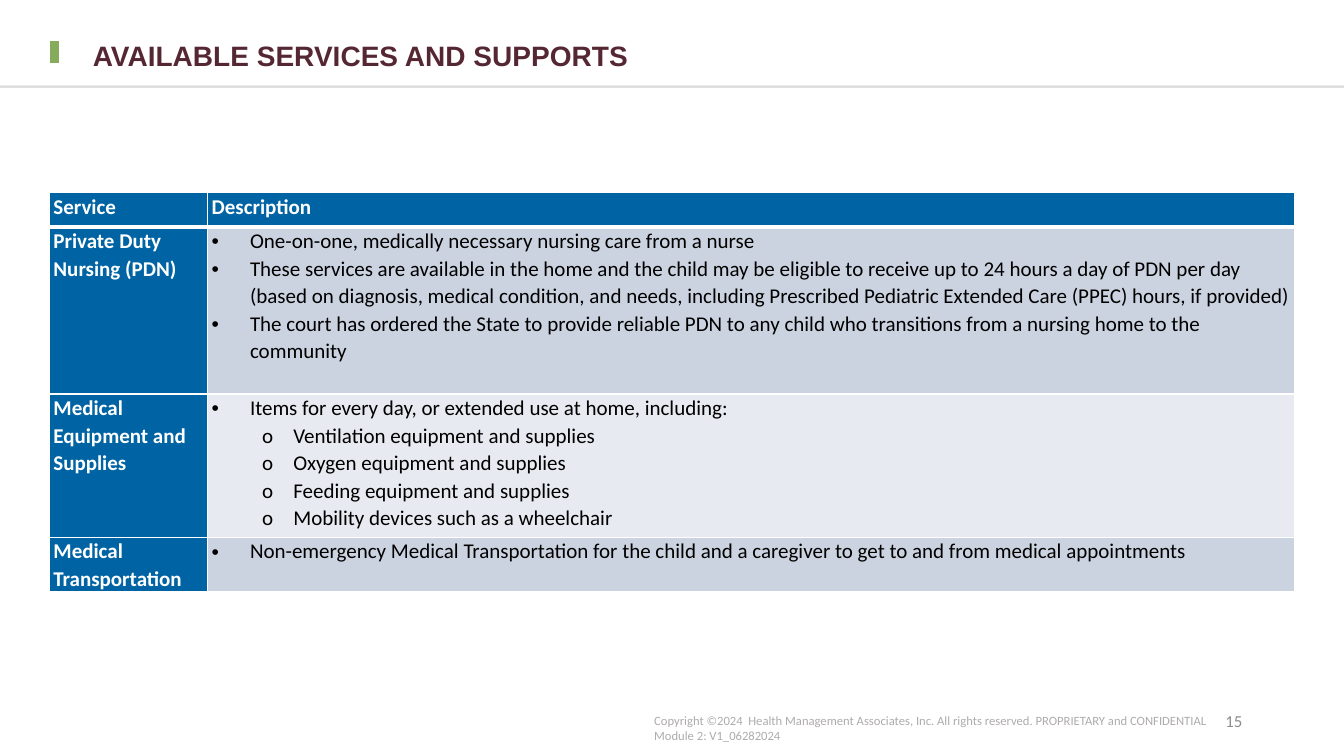
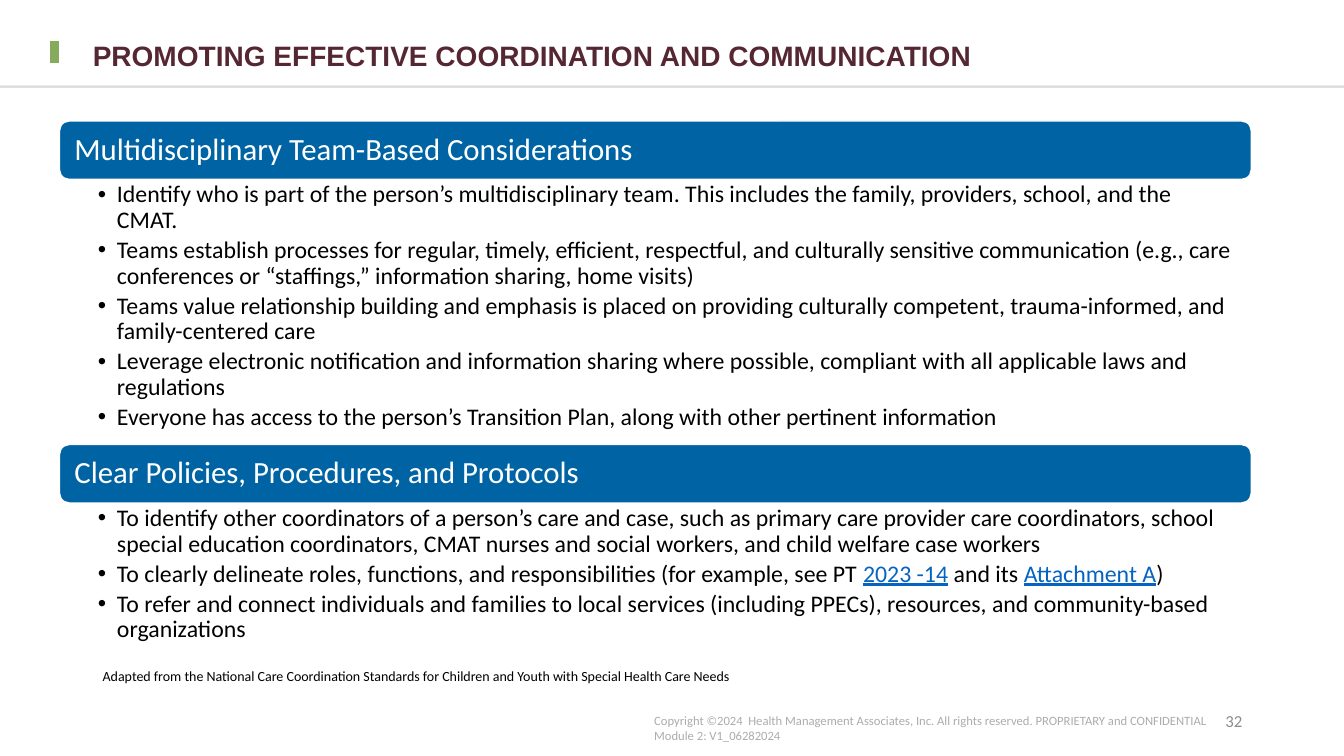
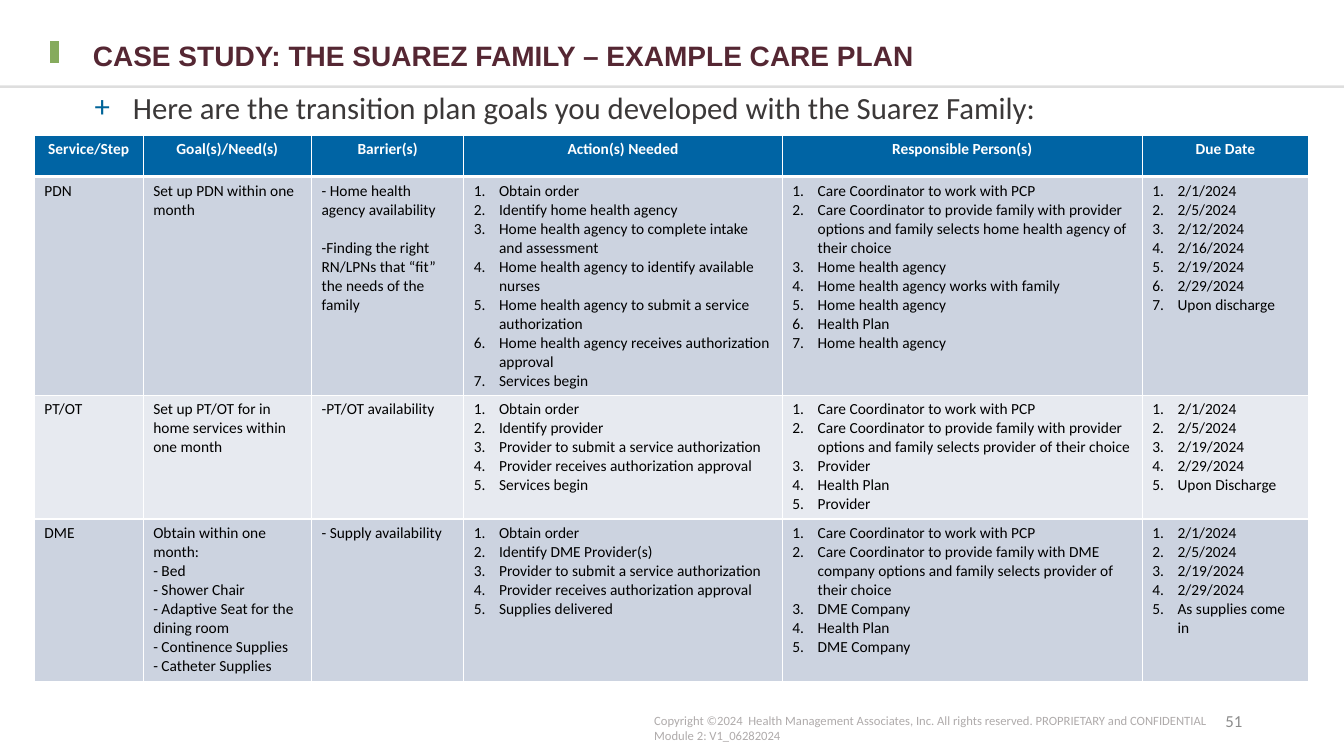
from lxml.etree import SubElement
from pptx import Presentation
from pptx.dml.color import RGBColor
from pptx.enum.shapes import MSO_CONNECTOR, MSO_SHAPE
from pptx.enum.text import MSO_ANCHOR, MSO_AUTO_SIZE, PP_ALIGN
from pptx.oxml.ns import qn
from pptx.util import Inches, Pt

COLORS = {
    "title": "552733",
    "green": "86AB5D",
    "blue": "0064A4",
    "plus": "006498",
    "band_dark": "CCD3E0",
    "band_light": "E7EAF0",
    "link": "0563C1",
    "intro": "3B3838",
    "footer": "AFABAB",
    "number": "8C8C8C",
    "black": "000000",
    "white": "FFFFFF",
}
MARKERS = {
    "bullet": {"left": 0.38, "hanging": 0.38, "char": "•", "font": "Arial"},
    "circle": {"left": 0.81, "hanging": 0.31, "char": "o", "font": "Calibri"},
    "point": {"left": 0.19, "hanging": 0.19, "char": "•", "font": "Arial"},
    "plus": {"left": 0.88, "hanging": 0.38, "char": "+", "font": "Calibri"},
    "number": {"left": 0.25, "hanging": 0.25},
}


def write(text_frame, lines, size, color, bold=False, marker=None, spacing=1.0, after=0, align=PP_ALIGN.LEFT):
    text_frame.word_wrap = True
    for index, line in enumerate(lines):
        line_marker, text = line if isinstance(line, tuple) else (marker, line)
        paragraph = text_frame.paragraphs[0] if index == 0 else text_frame.add_paragraph()
        paragraph.alignment = align
        paragraph.line_spacing = spacing
        paragraph.space_after = Pt(after)
        if line_marker:
            look = MARKERS[line_marker]
            properties = paragraph._p.get_or_add_pPr()
            properties.set("marL", str(Inches(look["left"])))
            properties.set("indent", str(-Inches(look["hanging"])))
            if line_marker == "plus":
                bullet_color = SubElement(properties, qn("a:buClr"))
                SubElement(bullet_color, qn("a:srgbClr"), val=COLORS["plus"])
            if "char" in look:
                SubElement(properties, qn("a:buFont"), typeface=look["font"])
                SubElement(properties, qn("a:buChar"), char=look["char"])
            else:
                SubElement(properties, qn("a:buAutoNum"), type="arabicPeriod")
            if line_marker in ("circle", "point", "plus"):
                paragraph.level = 1
        for part, piece in enumerate(text.split("|")):
            is_link = part % 2 == 1
            run = paragraph.add_run()
            run.text = piece
            run.font.name = "Calibri"
            run.font.size = Pt(size)
            run.font.bold = bold
            run.font.color.rgb = RGBColor.from_string(COLORS["link" if is_link else color])
            if is_link:
                run.font.underline = True


def add_text_box(slide, box, lines, size, color, anchor=MSO_ANCHOR.TOP, margins=(0.1, 0.05, 0.1, 0.05), **options):
    text_frame = slide.shapes.add_textbox(*map(Inches, box)).text_frame
    text_frame.vertical_anchor = anchor
    (text_frame.margin_left, text_frame.margin_top,
     text_frame.margin_right, text_frame.margin_bottom) = map(Inches, margins)
    write(text_frame, lines, size, color, **options)


presentation = Presentation()
presentation.slide_width = Inches(13.33)
presentation.slide_height = Inches(7.5)

pages = [
    ("AVAILABLE SERVICES AND SUPPORTS", "15"),
    ("PROMOTING EFFECTIVE COORDINATION AND COMMUNICATION", "32"),
    ("CASE STUDY: THE SUAREZ FAMILY – EXAMPLE CARE PLAN", "51"),
]
rules = [
    ((0, 0.86, 13.33, 0.86), "black", 1.75, 12),
    ((0.54, 0.41, 0.54, 0.63), "green", 7, 100),
]
copyright_lines = [
    "Copyright ©2024  Health Management Associates, Inc. All rights reserved. PROPRIETARY and CONFIDENTIAL",
    "Module 2: V1_06282024",
]
for title_text, page_number in pages:
    slide = presentation.slides.add_slide(presentation.slide_layouts[5])
    for ends, color, width, opacity in rules:
        rule = slide.shapes.add_connector(MSO_CONNECTOR.STRAIGHT, *map(Inches, ends))
        rule.line.width = Pt(width)
        rule.line.color.rgb = RGBColor.from_string(COLORS[color])
        SubElement(rule._element.spPr.find(".//" + qn("a:srgbClr")), qn("a:alpha"), val=str(opacity * 1000))
        SubElement(rule._element.spPr, qn("a:effectLst"))
    title = slide.shapes.title
    title.left, title.top, title.width, title.height = map(Inches, (0.92, 0.42, 11.5, 0.3))
    title_frame = title.text_frame
    title_frame.text = title_text
    title_frame.auto_size = MSO_AUTO_SIZE.NONE
    title_frame.vertical_anchor = MSO_ANCHOR.MIDDLE
    title_frame.margin_left = title_frame.margin_right = 0
    title_frame.margin_top = title_frame.margin_bottom = 0
    title_paragraph = title_frame.paragraphs[0]
    title_paragraph.alignment = PP_ALIGN.LEFT
    title_paragraph.line_spacing = 0.9
    title_font = title_paragraph.runs[0].font
    title_font.name = "Arial"
    title_font.size = Pt(20)
    title_font.bold = True
    title_font.color.rgb = RGBColor.from_string(COLORS["title"])
    add_text_box(slide, (6.39, 7.02, 5.74, 0.4), copyright_lines, 9, "footer")
    add_text_box(slide, (9.42, 6.95, 3, 0.4), [page_number], 12, "number",
                 anchor=MSO_ANCHOR.MIDDLE, align=PP_ALIGN.RIGHT)

services_slide, coordination_slide, care_plan_slide = presentation.slides

sections = [
    (1.2, 2.64, "Multidisciplinary Team-Based Considerations", [
        "Identify who is part of the person’s multidisciplinary team. This includes the family, providers, school, and the CMAT.",
        "Teams establish processes for regular, timely, efficient, respectful, and culturally sensitive communication (e.g., care conferences or “staffings,” information sharing, home visits)",
        "Teams value relationship building and emphasis is placed on providing culturally competent, trauma-informed, and family-centered care",
        "Leverage electronic notification and information sharing where possible, compliant with all applicable laws and regulations",
        "Everyone has access to the person’s Transition Plan, along with other pertinent information",
    ]),
    (4.41, 1.49, "Clear Policies, Procedures, and Protocols", [
        "To identify other coordinators of a person’s care and case, such as primary care provider care coordinators, school special education coordinators, CMAT nurses and social workers, and child welfare case workers",
        "To clearly delineate roles, functions, and responsibilities (for example, see PT |2023 -14| and its |Attachment A|)",
        "To refer and connect individuals and families to local services (including PPECs), resources, and community-based organizations",
    ]),
]
banner_height = 0.58
for top, body_height, heading, points in sections:
    banner = coordination_slide.shapes.add_shape(
        MSO_SHAPE.ROUNDED_RECTANGLE, Inches(0.59), Inches(top), Inches(11.82), Inches(banner_height))
    banner.shadow.inherit = False
    banner.fill.solid()
    banner.fill.fore_color.rgb = RGBColor.from_string(COLORS["blue"])
    banner.line.color.rgb = RGBColor.from_string(COLORS["white"])
    banner.line.width = Pt(1)
    banner.text_frame.margin_left = Inches(0.12)
    banner.text_frame.vertical_anchor = MSO_ANCHOR.MIDDLE
    write(banner.text_frame, [heading], 22, "white", spacing=0.9)
    add_text_box(coordination_slide, (0.59, top + banner_height, 11.82, body_height), points, 17, "black",
                 margins=(0.38, 0.03, 0.17, 0.03), marker="point", spacing=0.9, after=3)

add_text_box(coordination_slide, (0.92, 6.44, 11.5, 0.4),
             ["Adapted from the National Care Coordination Standards for Children and Youth with Special Health Care Needs"],
             10, "black", anchor=MSO_ANCHOR.BOTTOM, spacing=0.9)
add_text_box(care_plan_slide, (0.34, 0.87, 11.5, 0.45),
             ["Here are the transition plan goals you developed with the Suarez Family:"],
             22, "intro", marker="plus", spacing=0.9)

service_rows = [
    [["Service"], ["Description"]],
    [["Private Duty Nursing (PDN)"], [
        ("bullet", "One-on-one, medically necessary nursing care from a nurse"),
        ("bullet", "These services are available in the home and the child may be eligible to receive up to 24 hours a day of PDN per day (based on diagnosis, medical condition, and needs, including Prescribed Pediatric Extended Care (PPEC) hours, if provided)"),
        ("bullet", "The court has ordered the State to provide reliable PDN to any child who transitions from a nursing home to the community"),
    ]],
    [["Medical Equipment and Supplies"], [
        ("bullet", "Items for every day, or extended use at home, including:"),
        ("circle", "Ventilation equipment and supplies"),
        ("circle", "Oxygen equipment and supplies"),
        ("circle", "Feeding equipment and supplies"),
        ("circle", "Mobility devices such as a wheelchair"),
    ]],
    [["Medical Transportation"], [
        ("bullet", "Non-emergency Medical Transportation for the child and a caregiver to get to and from medical appointments"),
    ]],
]
care_plan_rows = [
    [["Service/Step"], ["Goal(s)/Need(s)"], ["Barrier(s)"], ["Action(s) Needed"],
     ["Responsible Person(s)"], ["Due Date"]],
    [
        ["PDN"],
        ["Set up PDN within one month"],
        ["- Home health agency availability",
         "-Finding the right RN/LPNs that “fit” the needs of the family"],
        ["Obtain order", "Identify home health agency",
         "Home health agency to complete intake and assessment",
         "Home health agency to identify available nurses",
         "Home health agency to submit a service authorization",
         "Home health agency receives authorization approval", "Services begin"],
        ["Care Coordinator to work with PCP",
         "Care Coordinator to provide family with provider options and family selects home health agency of their choice",
         "Home health agency", "Home health agency works with family",
         "Home health agency", "Health Plan", "Home health agency"],
        ["2/1/2024", "2/5/2024", "2/12/2024", "2/16/2024", "2/19/2024", "2/29/2024", "Upon discharge"],
    ],
    [
        ["PT/OT"],
        ["Set up PT/OT for in home services within one month"],
        ["-PT/OT availability"],
        ["Obtain order", "Identify provider", "Provider to submit a service authorization",
         "Provider receives authorization approval", "Services begin"],
        ["Care Coordinator to work with PCP",
         "Care Coordinator to provide family with provider options and family selects provider of their choice",
         "Provider", "Health Plan", "Provider"],
        ["2/1/2024", "2/5/2024", "2/19/2024", "2/29/2024", "Upon Discharge"],
    ],
    [
        ["DME"],
        ["Obtain within one month:", "- Bed", "- Shower Chair", "- Adaptive Seat for the dining room",
         "- Continence Supplies", "- Catheter Supplies"],
        ["- Supply availability"],
        ["Obtain order", "Identify DME Provider(s)", "Provider to submit a service authorization",
         "Provider receives authorization approval", "Supplies delivered"],
        ["Care Coordinator to work with PCP",
         "Care Coordinator to provide family with DME company options and family selects provider of their choice",
         "DME Company", "Health Plan", "DME Company"],
        ["2/1/2024", "2/5/2024", "2/19/2024", "2/29/2024", "As supplies come in"],
    ],
]
tables = [
    {"slide": services_slide, "left": 0.49, "top": 1.91, "widths": [1.57, 10.78],
     "heights": [0.34, 1.66, 1.42, 0.54], "rows": service_rows, "size": 15, "spacing": 1.07,
     "margins": (0.04, 0), "header_align": PP_ALIGN.LEFT, "blue_columns": 1, "first_numbered": 2},
    {"slide": care_plan_slide, "left": 0.34, "top": 1.34, "widths": [1.08, 1.67, 1.51, 3.16, 3.57, 1.65],
     "heights": [0.41, 2.17, 1.23, 1.61], "rows": care_plan_rows, "size": 11, "spacing": 1.0,
     "margins": (0.1, 0.05), "header_align": PP_ALIGN.CENTER, "blue_columns": 0, "first_numbered": 3},
]
for plan in tables:
    rows, widths, heights = plan["rows"], plan["widths"], plan["heights"]
    table = plan["slide"].shapes.add_table(
        len(rows), len(widths), Inches(plan["left"]), Inches(plan["top"]),
        Inches(sum(widths)), Inches(sum(heights))).table
    for column, width in zip(table.columns, widths):
        column.width = Inches(width)
    for row_index, (row, height) in enumerate(zip(rows, heights)):
        table.rows[row_index].height = Inches(height)
        is_header = row_index == 0
        for column_index, lines in enumerate(row):
            cell = table.cell(row_index, column_index)
            is_blue = is_header or column_index < plan["blue_columns"]
            is_numbered = not is_header and column_index >= plan["first_numbered"]
            band = "blue" if is_blue else "band_dark" if row_index % 2 else "band_light"
            cell.margin_left = cell.margin_right = Inches(plan["margins"][0])
            cell.margin_top = cell.margin_bottom = Inches(plan["margins"][1])
            write(cell.text_frame, lines, plan["size"], "white" if is_blue else "black", bold=is_blue,
                  marker="number" if is_numbered else None, spacing=plan["spacing"],
                  align=plan["header_align"] if is_header else PP_ALIGN.LEFT)
            for side in ("L", "R", "T", "B"):
                thick = (is_header and side == "B") or (row_index == 1 and side == "T")
                border = SubElement(cell._tc.get_or_add_tcPr(), qn("a:ln" + side), w=str(Pt(3 if thick else 1)))
                border_fill = SubElement(border, qn("a:solidFill"))
                SubElement(border_fill, qn("a:srgbClr"), val=COLORS["white"])
            cell.fill.solid()
            cell.fill.fore_color.rgb = RGBColor.from_string(COLORS[band])

pdn_barriers = table.cell(1, 2).text_frame
pdn_barriers.paragraphs[0].space_after = Pt(13.4)

presentation.save("out.pptx")
